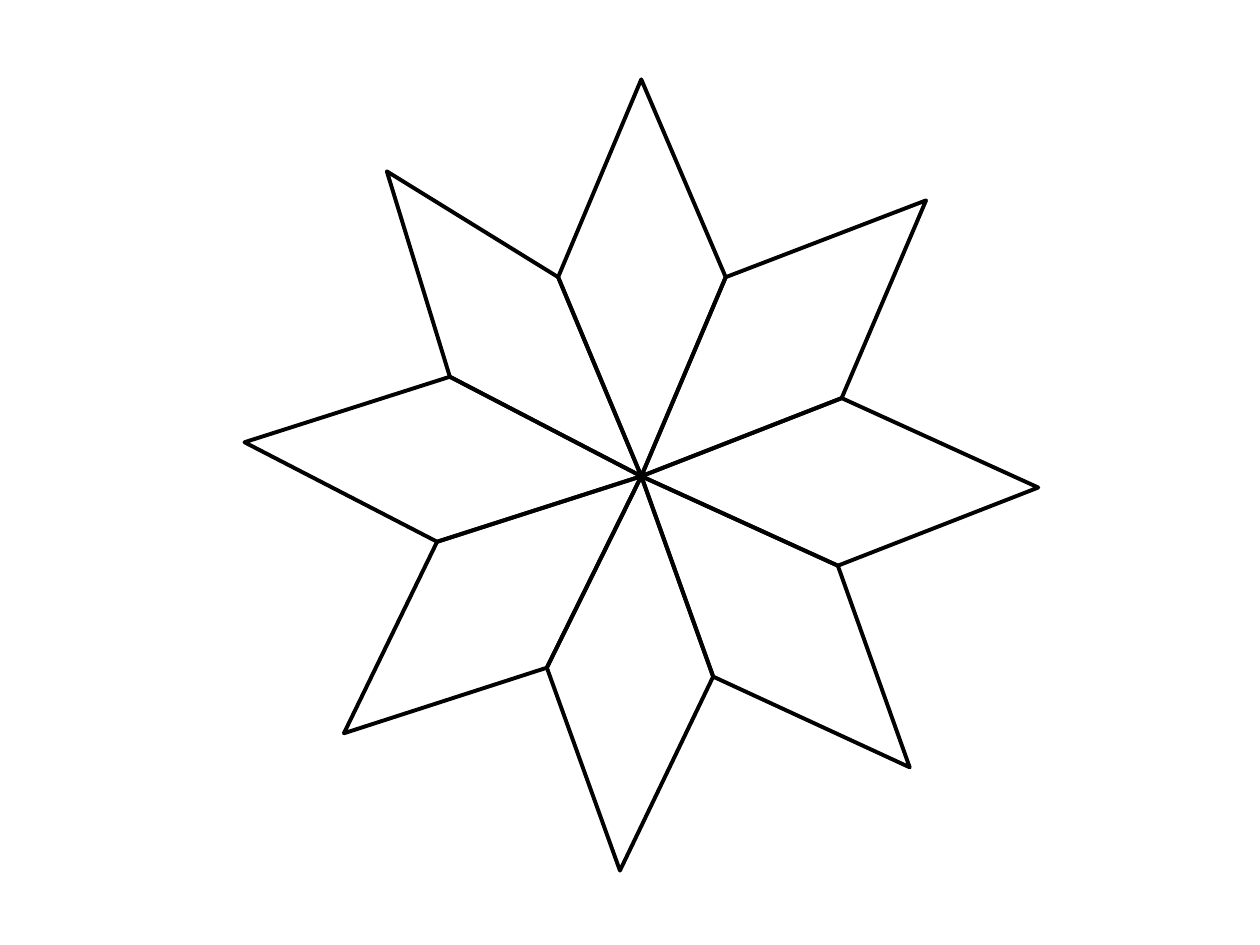
import dataclasses
import typing

import pptx
import pptx.dml.color
import pptx.util


@dataclasses.dataclass(frozen=True)
class Theme:
    ink: str = "010101"
    line: float = 2.25


class Spot(typing.NamedTuple):
    """A place on a grid of 1000 columns by 750 rows."""
    col: int
    row: int


class Petal(typing.NamedTuple):
    left: Spot
    tip: Spot
    right: Spot


THEME = Theme()
COLS, ROWS = 1000, 750
CELL = pptx.util.Inches(0.01)
HUB = Spot(509, 378)

# Notches and tips of the hand-drawn star, clockwise from the upper right
NOTCHES = [Spot(576, 220), Spot(668, 316), Spot(665, 449), Spot(566, 537),
           Spot(434, 530), Spot(347, 430), Spot(357, 299), Spot(443, 220)]
TIPS = [Spot(735, 159), Spot(824, 387), Spot(722, 609), Spot(492, 691),
        Spot(273, 582), Spot(194, 351), Spot(307, 136), Spot(509, 63)]


def draw(group, petal: Petal) -> None:
    """Draw one open-faced petal from the hub around its tip."""
    pen = group.shapes.build_freeform(HUB.col, HUB.row, scale=CELL)
    pen.add_line_segments(petal, close=True)
    shape = pen.convert_to_shape()
    shape.shadow.inherit = False
    shape.fill.background()
    shape.line.color.rgb = pptx.dml.color.RGBColor.from_string(THEME.ink)
    shape.line.width = pptx.util.Pt(THEME.line)


def main() -> None:
    deck = pptx.Presentation()
    deck.slide_width, deck.slide_height = COLS * CELL, ROWS * CELL
    slide = deck.slides.add_slide(deck.slide_layouts[6])

    # Star: each petal spans two neighbouring notches
    star = slide.shapes.add_group_shape()
    for left, tip, right in zip(NOTCHES, TIPS, NOTCHES[1:] + NOTCHES[:1]):
        draw(star, Petal(left, tip, right))

    deck.save("out.pptx")


if __name__ == "__main__":
    main()
